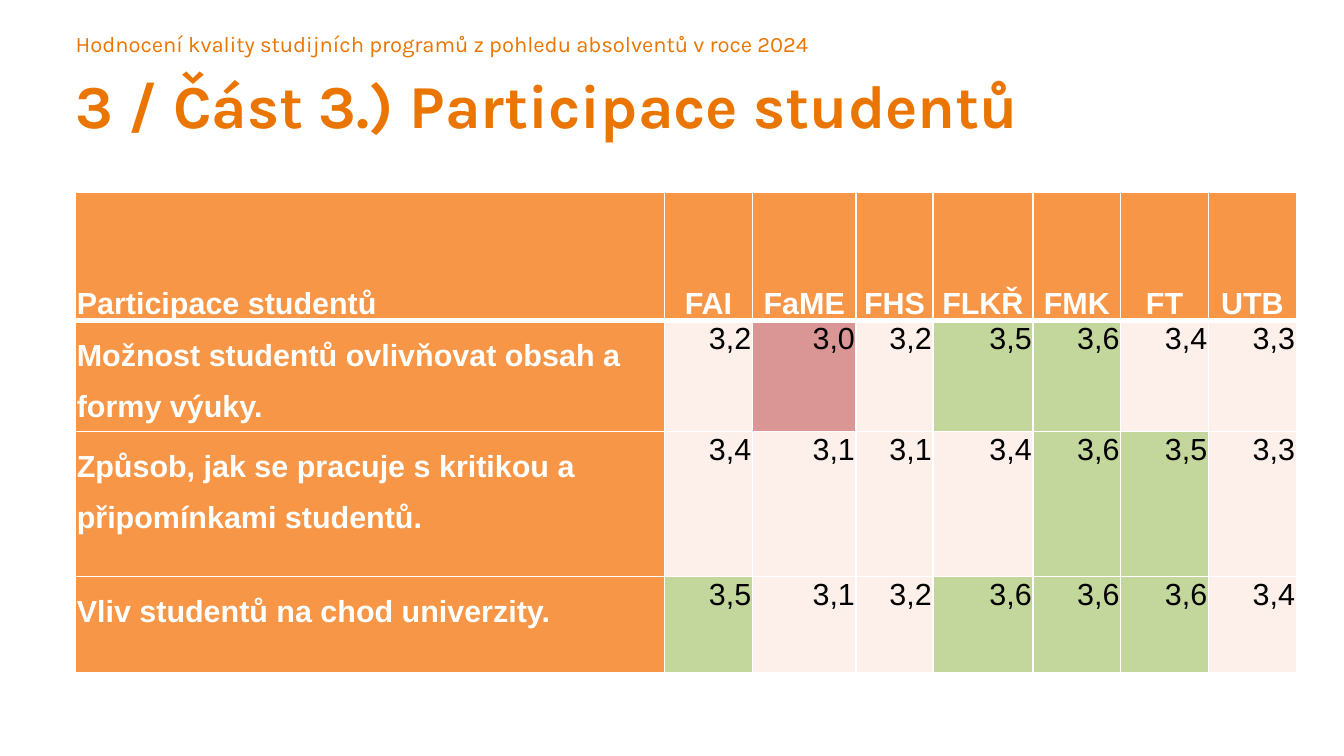
from lxml import etree
from pptx import Presentation
from pptx.dml.color import RGBColor
from pptx.enum.text import MSO_ANCHOR, PP_ALIGN
from pptx.oxml.ns import qn
from pptx.util import Inches, Pt

LEFT, CENTER, RIGHT = PP_ALIGN.LEFT, PP_ALIGN.CENTER, PP_ALIGN.RIGHT
TOP, BOTTOM = MSO_ANCHOR.TOP, MSO_ANCHOR.BOTTOM

# Content
COLORS = {
    "title": "EA7500", "header": "F79646", "plain": "FDEFE9",
    "high": "C3D69B", "low": "D99694", "white": "FFFFFF", "black": "000000",
}
# text, top, width, height, size, bold
HEADINGS = [
    ("Hodnocení kvality studijních programů z pohledu absolventů v roce 2024",
     0.25, 9.92, 0.22, 13, False),
    ("3 / Část 3.) Participace studentů", 0.55, 10.18, 0.61, 36, True),
]
HEADER = ["Participace studentů", "FAI", "FaME", "FHS", "FLKŘ", "FMK", "FT", "UTB"]
RATINGS = [
    ("Možnost studentů ovlivňovat obsah a formy výuky.",
     [3.2, 3.0, 3.2, 3.5, 3.6, 3.4, 3.3]),
    ("Způsob, jak se pracuje s kritikou a připomínkami studentů.",
     [3.4, 3.1, 3.1, 3.4, 3.6, 3.5, 3.3]),
    ("Vliv studentů na chod univerzity.",
     [3.5, 3.1, 3.2, 3.6, 3.6, 3.6, 3.4]),
]
HIGH_FROM, LOW_TO = 3.5, 3.0
MARGIN_LEFT, TABLE_TOP = 0.62, 1.58
COLUMN_WIDTHS = [4.83, 0.72, 0.85, 0.63, 0.82, 0.72, 0.72, 0.72]
ROW_HEIGHTS = [1.05, 0.91, 1.19, 0.79]


def rgb(name):
    return RGBColor.from_string(COLORS[name])


def add_text(paragraph, text, font, size, color, bold):
    run = paragraph.add_run()
    run.text = text
    run.font.name = font
    run.font.size = Pt(size)
    run.font.bold = bold
    run.font.color.rgb = rgb(color)


def add_border(cell, side, points):
    line = etree.SubElement(cell._tc.get_or_add_tcPr(), qn(f"a:ln{side}"),
                            w=str(Pt(points)))
    fill = etree.SubElement(line, qn("a:solidFill"))
    etree.SubElement(fill, qn("a:srgbClr"), val=COLORS["white"])


def rating_fill(value):
    if value >= HIGH_FROM:
        return "high"
    return "low" if value <= LOW_TO else "plain"


def fill_cell(cell, row, column, text, fill):
    is_header, is_label = row == 0, column == 0
    is_faculty = is_header and not is_label
    is_value = not is_header and not is_label

    # Borders, with a thick line under the header
    for side, points in (("L", 1), ("R", 1), ("T", 3 if row == 1 else 1),
                         ("B", 3 if is_header else 1)):
        add_border(cell, side, points)
    cell.fill.solid()
    cell.fill.fore_color.rgb = rgb(fill)

    cell.margin_left = cell.margin_right = Inches(0.05 if is_faculty else 0.01)
    cell.margin_top = Inches(0 if is_faculty else 0.01)
    cell.margin_bottom = 0
    cell.vertical_anchor = BOTTOM if is_header else TOP

    paragraph = cell.text_frame.paragraphs[0]
    paragraph.alignment = RIGHT if is_value else CENTER if is_faculty else LEFT
    paragraph.line_spacing = 1.0 if is_value else 1.5
    add_text(paragraph, text, "Arial", 18, "black" if is_value else "white",
             not is_value)


def main():
    presentation = Presentation()
    presentation.slide_width, presentation.slide_height = Inches(11.02), Inches(6.2)
    slide = presentation.slides.add_slide(presentation.slide_layouts[6])

    # Headings
    for text, top, width, height, size, bold in HEADINGS:
        box = slide.shapes.add_textbox(Inches(MARGIN_LEFT), Inches(top),
                                       Inches(width), Inches(height))
        frame = box.text_frame
        frame.word_wrap = True
        frame.margin_left = frame.margin_right = 0
        frame.margin_top = frame.margin_bottom = 0
        add_text(frame.paragraphs[0], text, "Karla", size, "title", bold)

    # Ratings table
    table = slide.shapes.add_table(
        len(ROW_HEIGHTS), len(COLUMN_WIDTHS), Inches(MARGIN_LEFT), Inches(TABLE_TOP),
        Inches(sum(COLUMN_WIDTHS)), Inches(sum(ROW_HEIGHTS))).table
    for column, width in zip(table.columns, COLUMN_WIDTHS):
        column.width = Inches(width)
    for row, height in zip(table.rows, ROW_HEIGHTS):
        row.height = Inches(height)

    rows = [[(text, "header") for text in HEADER]]
    for label, values in RATINGS:
        rows.append([(label, "header")] + [
            (f"{value:.1f}".replace(".", ","), rating_fill(value)) for value in values])
    for r, row in enumerate(rows):
        for c, (text, fill) in enumerate(row):
            fill_cell(table.cell(r, c), r, c, text, fill)

    presentation.save("out.pptx")


if __name__ == "__main__":
    main()
